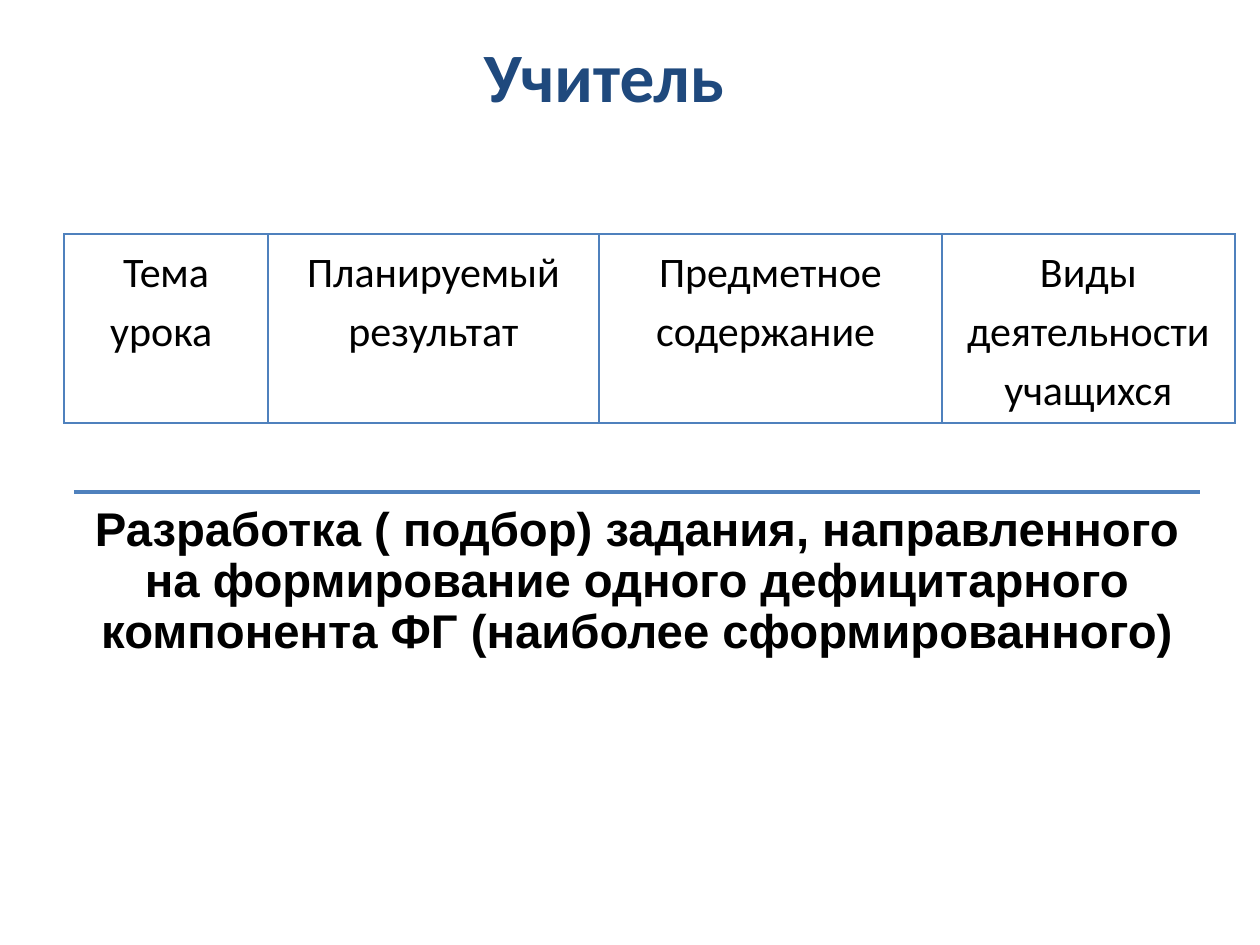
from dataclasses import dataclass

from lxml import etree
from pptx import Presentation
from pptx.dml.color import RGBColor
from pptx.enum.shapes import MSO_CONNECTOR
from pptx.enum.text import MSO_ANCHOR, PP_ALIGN
from pptx.oxml.ns import qn
from pptx.slide import Slide
from pptx.table import _Cell
from pptx.text.text import TextFrame
from pptx.util import Pt

EMU_PER_PX = 914400 // 126
STRAIGHT = MSO_CONNECTOR.STRAIGHT
CENTER = PP_ALIGN.CENTER
TOP, MIDDLE = MSO_ANCHOR.TOP, MSO_ANCHOR.MIDDLE


@dataclass(frozen=True)
class TextStyle:
    font: str
    size: float
    color: str
    bold: bool
    line_spacing: float


@dataclass(frozen=True)
class Theme:
    accent: str = "4F81BD"
    rule_width: float = 2
    border_width: float = 0.96
    title: TextStyle = TextStyle("Calibri", 39.6, "1F497D", True, 1.0)
    header: TextStyle = TextStyle("Calibri", 24, "000000", False, 1.15)
    task: TextStyle = TextStyle("Arial", 27, "000000", True, 0.9)


@dataclass(frozen=True)
class Box:
    left: int
    top: int
    width: int
    height: int


@dataclass(frozen=True)
class Insets:
    left: int
    top: int
    right: int
    bottom: int


@dataclass(frozen=True)
class Column:
    heading: str
    width: int


THEME = Theme()
TITLE_BOX = Box(107, 55, 1153, 123)
TITLE_INSETS = Insets(13, 6, 172, 90)
TABLE_LEFT, TABLE_TOP, ROW_HEIGHT = 64, 234, 189
CELL_INSETS = Insets(9, 6, 9, 6)
COLUMNS = (
    Column("Тема урока ", 204),
    Column("Планируемый результат", 331),
    Column("Предметное содержание ", 343),
    Column("Виды деятельности учащихся", 293),
)
TASK_BOX = Box(74, 492, 1126, 179)
TASK_INSETS = Insets(14, 14, 14, 14)
TASK = (
    "Разработка ( подбор) задания, направленного на формирование одного "
    "дефицитарного компонента ФГ (наиболее сформированного)"
)


def px(length: int) -> int:
    return length * EMU_PER_PX


def write_text(frame: TextFrame, text: str, style: TextStyle) -> None:
    paragraph = frame.paragraphs[0]
    paragraph.alignment = CENTER
    paragraph.line_spacing = style.line_spacing
    run = paragraph.add_run()
    run.text = text
    run.font.name = style.font
    run.font.size = Pt(style.size)
    run.font.bold = style.bold
    run.font.color.rgb = RGBColor.from_string(style.color)


def set_margins(target: TextFrame | _Cell, insets: Insets) -> None:
    target.margin_left = px(insets.left)
    target.margin_top = px(insets.top)
    target.margin_right = px(insets.right)
    target.margin_bottom = px(insets.bottom)


def add_text(slide: Slide, box: Box, insets: Insets, text: str,
             style: TextStyle, anchor: MSO_ANCHOR) -> None:
    shape = slide.shapes.add_textbox(
        px(box.left), px(box.top), px(box.width), px(box.height))
    frame = shape.text_frame
    frame.word_wrap = True
    frame.vertical_anchor = anchor
    set_margins(frame, insets)
    write_text(frame, text, style)


def add_borders(cell: _Cell) -> None:
    properties = cell._tc.get_or_add_tcPr()
    for position, side in enumerate(("a:lnL", "a:lnR", "a:lnT", "a:lnB")):
        line = etree.Element(qn(side), w=str(int(Pt(THEME.border_width))))
        fill = etree.SubElement(line, qn("a:solidFill"))
        etree.SubElement(fill, qn("a:srgbClr"), val=THEME.accent)
        properties.insert(position, line)


def add_header_table(slide: Slide) -> None:
    total_width = sum(column.width for column in COLUMNS)
    table = slide.shapes.add_table(
        1, len(COLUMNS), px(TABLE_LEFT), px(TABLE_TOP),
        px(total_width), px(ROW_HEIGHT)).table
    table.first_row = False
    table.horz_banding = False
    for index, column in enumerate(COLUMNS):
        table.columns[index].width = px(column.width)
        cell = table.cell(0, index)
        cell.fill.background()
        cell.vertical_anchor = TOP
        set_margins(cell, CELL_INSETS)
        write_text(cell.text_frame, column.heading, THEME.header)
        add_borders(cell)


def add_rule(slide: Slide, left: int, top: int, width: int) -> None:
    rule = slide.shapes.add_connector(
        STRAIGHT, px(left), px(top), px(left + width), px(top))
    rule.line.color.rgb = RGBColor.from_string(THEME.accent)
    rule.line.width = Pt(THEME.rule_width)
    etree.SubElement(rule._element.spPr, qn("a:effectLst"))


def main() -> None:
    presentation = Presentation()
    presentation.slide_width = px(1260)
    presentation.slide_height = px(945)
    slide = presentation.slides.add_slide(presentation.slide_layouts[6])
    add_text(slide, TITLE_BOX, TITLE_INSETS, "Учитель", THEME.title, MIDDLE)
    add_header_table(slide)
    add_rule(slide, TASK_BOX.left, TASK_BOX.top, TASK_BOX.width)
    add_text(slide, TASK_BOX, TASK_INSETS, TASK, THEME.task, TOP)
    presentation.save("out.pptx")


if __name__ == "__main__":
    main()
